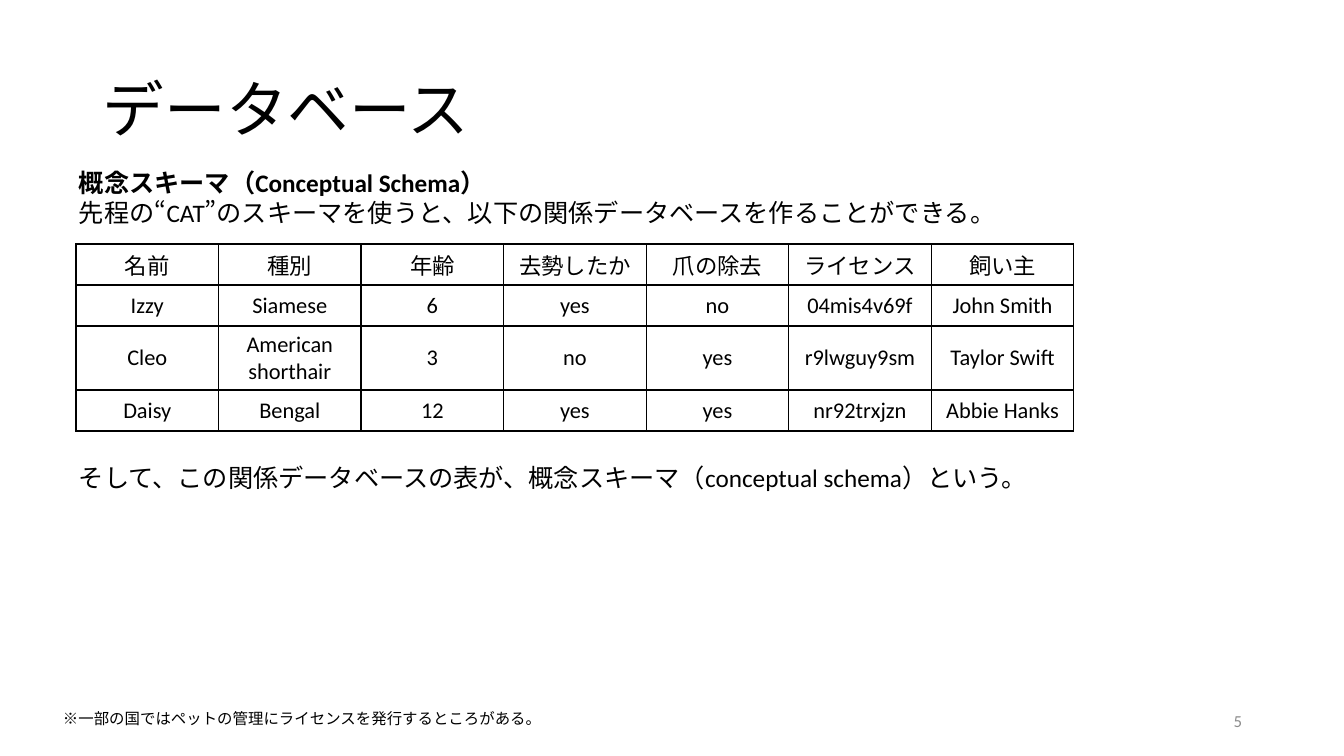
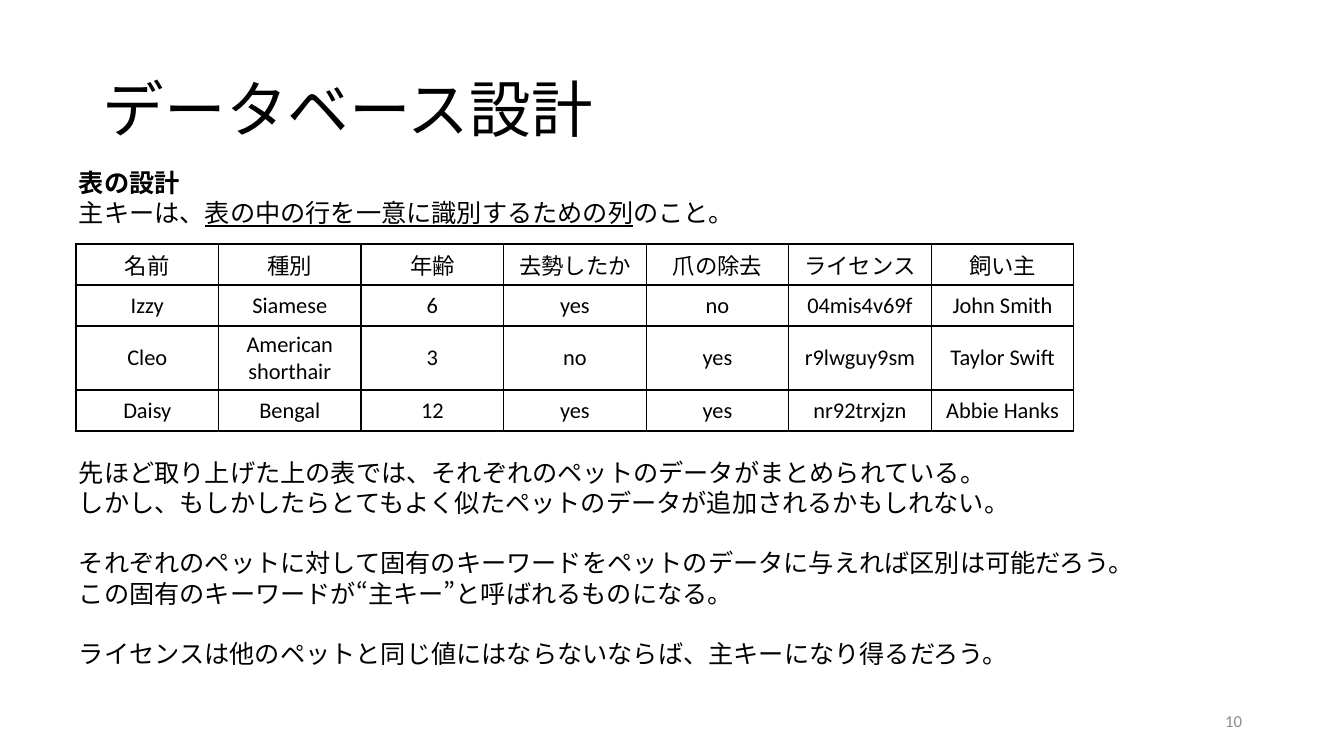
"""Builds two slides on relational databases: conceptual schema and primary keys."""
from dataclasses import dataclass

from lxml.etree import SubElement
from pptx import Presentation
from pptx.dml.color import RGBColor
from pptx.enum.lang import MSO_LANGUAGE_ID
from pptx.enum.text import MSO_ANCHOR, PP_ALIGN
from pptx.oxml.ns import qn
from pptx.util import Pt

SLIDE_W, SLIDE_H = 1344, 756
EMU_PER_PX = 12192000 / SLIDE_W


@dataclass(frozen=True)
class Theme:
    font: str = "Calibri"
    ink: str = "000000"
    muted: str = "8C8C8C"
    title: int = 44
    body: int = 18
    cell: int = 16
    number: int = 12
    footnote: int = 11
    block_gap: float = 21.6
    border: int = 1


THEME = Theme()

TITLE_BOX = (93, 40, 1159, 146)
NUMBER_BOX = (950, 701, 302, 40)
INTRO_BOX = (69, 162, 1209, 72)
FOOTNOTE_BOX = (53, 704, 727, 29)
TABLE_POS = (76, 244)
TABLE_W = 998
ROW_HEIGHTS = (41, 41, 64, 41)

PETS = [
    ("名前", "種別", "年齢", "去勢したか", "爪の除去", "ライセンス", "飼い主"),
    ("Izzy", "Siamese", "6", "yes", "no", "04mis4v69f", "John Smith"),
    ("Cleo", "American shorthair", "3", "no", "yes", "r9lwguy9sm", "Taylor Swift"),
    ("Daisy", "Bengal", "12", "yes", "yes", "nr92trxjzn", "Abbie Hanks"),
]

SLIDES = [
    {
        "title": "データベース",
        "number": "5",
        "intro": [[
            [("概念スキーマ（Conceptual Schema）", "bold")],
            "先程の“CAT”のスキーマを使うと、以下の関係データベースを作ることができる。",
        ]],
        "closing_box": (69, 457, 1209, 40),
        "closing": [[
            "そして、この関係データベースの表が、概念スキーマ（conceptual schema）という。",
        ]],
        "footnote": "※一部の国ではペットの管理にライセンスを発行するところがある。",
    },
    {
        "title": "データベース設計",
        "number": "10",
        "intro": [[
            [("表の設計", "bold")],
            [("主キーは、", None),
             ("表の中の行を一意に識別するための列", "underline"),
             ("のこと。", None)],
        ]],
        "closing_box": (69, 452, 1209, 224),
        "closing": [
            ["先ほど取り上げた上の表では、それぞれのペットのデータがまとめられている。",
             "しかし、もしかしたらとてもよく似たペットのデータが追加されるかもしれない。"],
            ["それぞれのペットに対して固有のキーワードをペットのデータに与えれば区別は可能だろう。",
             "この固有のキーワードが“主キー”と呼ばれるものになる。"],
            ["ライセンスは他のペットと同じ値にはならないならば、主キーになり得るだろう。"],
        ],
    },
]


def px(n):
    return round(n * EMU_PER_PX)


def style_run(r, size, color=THEME.ink, emphasis=None):
    r.font.name = THEME.font
    r.font.size = Pt(size)
    r.font.color.rgb = RGBColor.from_string(color)
    r.font.language_id = MSO_LANGUAGE_ID.JAPANESE
    if emphasis:
        setattr(r.font, emphasis, True)


def add_frame(s, box, anchor=MSO_ANCHOR.TOP):
    tf = s.shapes.add_textbox(*map(px, box)).text_frame
    tf.word_wrap = True
    tf.vertical_anchor = anchor
    return tf


def add_line(s, box, text, size, color=THEME.ink, anchor=MSO_ANCHOR.TOP):
    tf = add_frame(s, box, anchor)
    tf.text = text
    p = tf.paragraphs[0]
    style_run(p.runs[0], size, color)
    return p


def add_blocks(s, box, blocks):
    tf = add_frame(s, box)
    p = None
    for i, block in enumerate(blocks):
        for j, line in enumerate(block):
            p = tf.add_paragraph() if p else tf.paragraphs[0]
            if i and not j:
                p.space_before = Pt(THEME.block_gap)
            for text, emphasis in [(line, None)] if isinstance(line, str) else line:
                r = p.add_run()
                r.text = text
                style_run(r, THEME.body, emphasis=emphasis)


def add_borders(cell):
    props = cell._tc.get_or_add_tcPr()
    for side in ("a:lnL", "a:lnR", "a:lnT", "a:lnB"):
        ln = SubElement(props, qn(side), w=str(Pt(THEME.border)))
        SubElement(SubElement(ln, qn("a:solidFill")), qn("a:srgbClr"), val=THEME.ink)


def add_pet_table(s):
    n = len(PETS[0])
    size = (px(TABLE_W), px(sum(ROW_HEIGHTS)))
    table = s.shapes.add_table(len(PETS), n, *map(px, TABLE_POS), *size).table
    table.first_row = table.horz_banding = False
    for col in table.columns:
        col.width = px(TABLE_W / n)
    for row, height, values in zip(table.rows, ROW_HEIGHTS, PETS):
        row.height = px(height)
        for cell, value in zip(row.cells, values):
            cell.text = value
            cell.vertical_anchor = MSO_ANCHOR.MIDDLE
            p = cell.text_frame.paragraphs[0]
            p.alignment = PP_ALIGN.CENTER
            style_run(p.runs[0], THEME.cell)
            add_borders(cell)
            cell.fill.background()


def add_slide(prs, content):
    s = prs.slides.add_slide(prs.slide_layouts[6])
    title = add_line(s, TITLE_BOX, content["title"], THEME.title, anchor=MSO_ANCHOR.MIDDLE)
    title.line_spacing = 0.9
    number = add_line(s, NUMBER_BOX, content["number"], THEME.number, THEME.muted,
                      MSO_ANCHOR.MIDDLE)
    number.alignment = PP_ALIGN.RIGHT
    add_blocks(s, INTRO_BOX, content["intro"])
    add_pet_table(s)
    add_blocks(s, content["closing_box"], content["closing"])
    if "footnote" in content:
        add_line(s, FOOTNOTE_BOX, content["footnote"], THEME.footnote)


def main():
    prs = Presentation()
    prs.slide_width, prs.slide_height = px(SLIDE_W), px(SLIDE_H)
    for content in SLIDES:
        add_slide(prs, content)
    prs.save("out.pptx")


if __name__ == "__main__":
    main()
